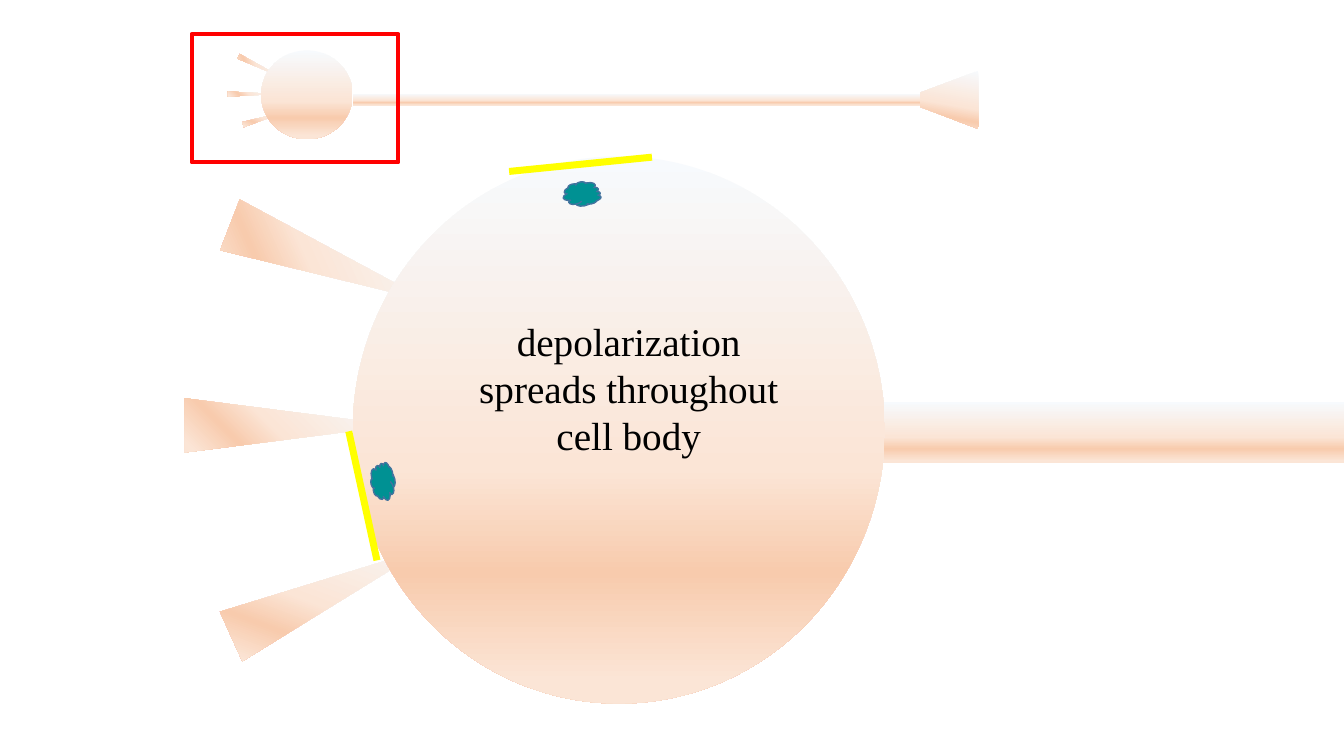
"""Build a slide showing depolarization spreading through a neuron's cell body."""
from lxml import etree
from pptx import Presentation
from pptx.dml.color import RGBColor
from pptx.enum.shapes import MSO_CONNECTOR, MSO_SHAPE
from pptx.enum.text import PP_ALIGN
from pptx.oxml import parse_xml
from pptx.oxml.ns import nsdecls, qn
from pptx.util import Cm, Pt

RECTANGLE = MSO_SHAPE.RECTANGLE
TRIANGLE = MSO_SHAPE.ISOSCELES_TRIANGLE
OVAL = MSO_SHAPE.OVAL
TRAPEZOID = MSO_SHAPE.TRAPEZOID
CLOUD = MSO_SHAPE.CLOUD
STRAIGHT = MSO_CONNECTOR.STRAIGHT
CENTER = PP_ALIGN.CENTER

COLORS = {
    "pale": "F7FAFD", "peach": "FBE5D6", "apricot": "F8CBAD", "frame": "FF0000",
    "membrane": "FFFF00", "channel": "009193", "channel_edge": "43739E", "text": "000000",
}
MEMBRANE_STOPS = [(0, "pale"), (57, "peach"), (76, "apricot"), (96, "peach")]

CAPTION = ["depolarization", "spreads throughout", "cell body"]
CAPTION_BOX = (9.42, 7.87, 12.85, 3.84)
FONT_NAME, FONT_SIZE = "Times New Roman", 28

LARGE_AXON = (21.41, 10.13, 14.33, 1.55)
LARGE_BODY = (8.89, 3.94, 13.41, 13.79)
SMALL_AXON = (8.89, 2.36, 14.33, 0.3)
SMALL_BODY = (6.58, 1.27, 2.31, 2.24)
TERMINAL = (23.19, 1.78, 1.47, 1.47)
ZOOM_FRAME = (4.83, 0.86, 5.21, 3.23)

DENDRITES = [
    ((1.37, 5.38), [(7.62, 3.94, 111), (6.65, 8.03, 90), (7.59, 12.24, 65.6)]),
    ((0.13, 1.24), [(6.5, 1.07, 116), (6.3, 1.75, 90), (6.65, 2.34, 73)]),
]
CHANNEL_SIZE = (0.61, 0.94)
CHANNELS = [(9.35, 11.68, 345.8), (14.35, 4.42, 78.8)]
MEMBRANE_PATCHES = [(12.83, 4.32, 16.43, 3.96), (8.79, 10.87, 9.5, 14.12)]


def color(name):
    return RGBColor.from_string(COLORS[name])


def add_shape(slide, kind, box, rotation=0):
    shape = slide.shapes.add_shape(kind, *map(Cm, box))
    shape.rotation = rotation
    shape.shadow.inherit = False
    shape.fill.background()
    shape.line.fill.background()
    return shape


def add_cell_part(slide, kind, box, angle=90, rotation=0):
    shape = add_shape(slide, kind, box, rotation)
    stops = "".join(
        f'<a:gs pos="{position * 1000}"><a:srgbClr val="{COLORS[name]}"/></a:gs>'
        for position, name in MEMBRANE_STOPS
    )
    gradient = parse_xml(
        f'<a:gradFill {nsdecls("a")} rotWithShape="1"><a:gsLst>{stops}</a:gsLst>'
        f'<a:lin ang="{angle * 60000}" scaled="0"/></a:gradFill>'
    )
    properties = shape._element.spPr
    properties.replace(properties.find(qn("a:noFill")), gradient)
    return shape


def set_line(shape, name, width):
    shape.line.color.rgb = color(name)
    shape.line.width = Pt(width)


def add_channel(slide, left, top, rotation):
    channel = add_shape(slide, CLOUD, (left, top, *CHANNEL_SIZE), rotation)
    channel.fill.solid()
    channel.fill.fore_color.rgb = color("channel")
    set_line(channel, "channel_edge", 1)


def add_membrane_patch(slide, ends):
    patch = slide.shapes.add_connector(STRAIGHT, *map(Cm, ends))
    set_line(patch, "membrane", 5)
    etree.SubElement(patch._element.spPr, qn("a:effectLst"))


def add_caption(slide):
    text_frame = slide.shapes.add_textbox(*map(Cm, CAPTION_BOX)).text_frame
    text_frame.word_wrap = True
    text_frame.text = "\n".join(CAPTION)
    for paragraph in text_frame.paragraphs:
        paragraph.alignment = CENTER
        for run in paragraph.runs:
            run.font.name = FONT_NAME
            run.font.size = Pt(FONT_SIZE)
            run.font.color.rgb = color("text")


def main():
    presentation = Presentation()
    presentation.slide_width, presentation.slide_height = Cm(33.87), Cm(19.05)
    slide = presentation.slides.add_slide(presentation.slide_layouts[6])

    add_cell_part(slide, RECTANGLE, LARGE_AXON)
    for size, places in DENDRITES:
        for left, top, rotation in places:
            add_cell_part(slide, TRIANGLE, (left, top, *size), 45, rotation)
    add_cell_part(slide, OVAL, SMALL_BODY)
    add_cell_part(slide, RECTANGLE, SMALL_AXON)
    terminal = add_cell_part(slide, TRAPEZOID, TERMINAL, 190, 270)
    terminal.adjustments[0] = 0.377
    set_line(add_shape(slide, RECTANGLE, ZOOM_FRAME), "frame", 3)
    add_cell_part(slide, OVAL, LARGE_BODY)
    add_caption(slide)
    for ends in MEMBRANE_PATCHES:
        add_membrane_patch(slide, ends)
    for channel in CHANNELS:
        add_channel(slide, *channel)

    presentation.save("out.pptx")


if __name__ == "__main__":
    main()
